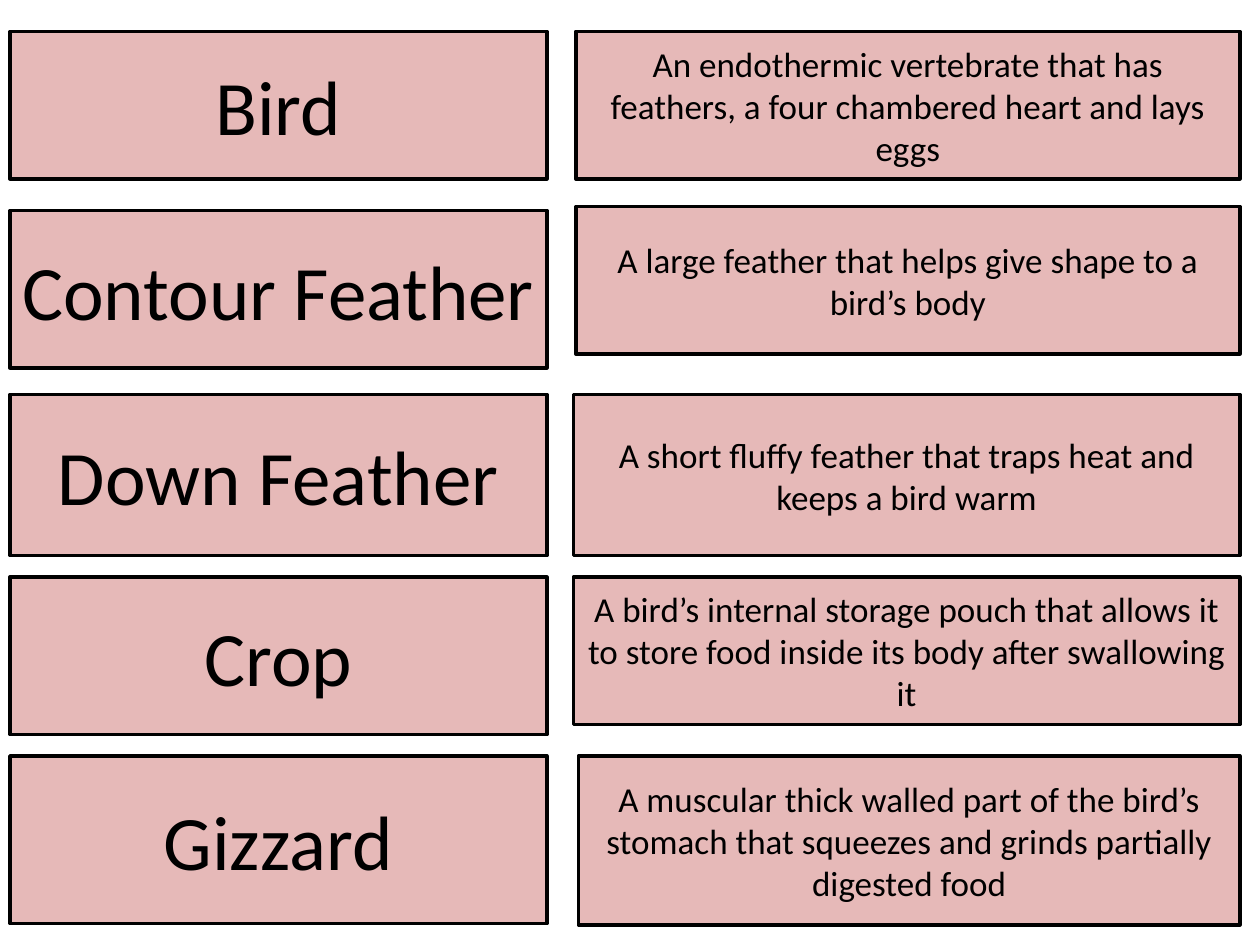
from dataclasses import dataclass

from pptx import Presentation
from pptx.dml.color import RGBColor
from pptx.enum.shapes import MSO_SHAPE as Shape
from pptx.enum.text import MSO_ANCHOR as Anchor, PP_ALIGN as Align
from pptx.util import Inches, Pt


@dataclass(frozen=True)
class Theme:
    font: str = "Calibri"
    fill: RGBColor = RGBColor(0xE6, 0xB9, 0xB8)
    ink: RGBColor = RGBColor(0, 0, 0)
    border: float = 2
    term_size: int = 44
    definition_size: int = 20


THEME = Theme()
TERM_LEFT, TERM_WIDTH = 0.08, 4.26
DEFINITION_RIGHT = 9.84

CARDS = [
    dict(term="Bird", term_box=(0.25, 1.17),
         definition="An endothermic vertebrate that has feathers, a four chambered heart and lays eggs",
         definition_box=(4.57, 0.25, 1.17)),
    dict(term="Contour Feather", term_box=(1.67, 1.25),
         definition="A large feather that helps give shape to a bird’s body",
         definition_box=(4.57, 1.64, 1.17)),
    dict(term="Down Feather", term_box=(3.13, 1.28),
         definition="A short fluffy feather that traps heat and keeps a bird warm",
         definition_box=(4.55, 3.13, 1.28)),
    dict(term="Crop", term_box=(4.58, 1.25),
         definition="A bird’s internal storage pouch that allows it to store food inside its body after swallowing it",
         definition_box=(4.55, 4.58, 1.17)),
    dict(term="Gizzard", term_box=(6, 1.33),
         definition="A muscular thick walled part of the bird’s stomach that squeezes and grinds partially digested food",
         definition_box=(4.59, 6, 1.34)),
]


def write_text(shape, text, *, size, margin=0.1):
    frame = shape.text_frame
    frame.word_wrap = True
    frame.vertical_anchor = Anchor.MIDDLE
    frame.margin_left = frame.margin_right = Inches(margin)
    paragraph = frame.paragraphs[0]
    paragraph.alignment = Align.CENTER
    run = paragraph.add_run()
    run.text = text
    run.font.name = THEME.font
    run.font.size = Pt(size)
    run.font.color.rgb = THEME.ink


def add_card(slide, left, top, width, height):
    shape = slide.shapes.add_shape(
        Shape.FLOWCHART_PROCESS, *map(Inches, (left, top, width, height)))
    shape.shadow.inherit = False
    shape.fill.solid()
    shape.fill.fore_color.rgb = THEME.fill
    shape.line.color.rgb = THEME.ink
    shape.line.width = Pt(THEME.border)
    return shape


def main():
    presentation = Presentation()
    presentation.slide_width = Inches(10)
    presentation.slide_height = Inches(7.5)
    slide = presentation.slides.add_slide(presentation.slide_layouts[6])

    for card in CARDS:
        top, height = card["term_box"]
        term = add_card(slide, TERM_LEFT, top, TERM_WIDTH, height)
        write_text(term, card["term"], size=THEME.term_size, margin=0.05)

        left, top, height = card["definition_box"]
        definition = add_card(slide, left, top, DEFINITION_RIGHT - left, height)
        write_text(definition, card["definition"], size=THEME.definition_size)

    presentation.save("out.pptx")


if __name__ == "__main__":
    main()
